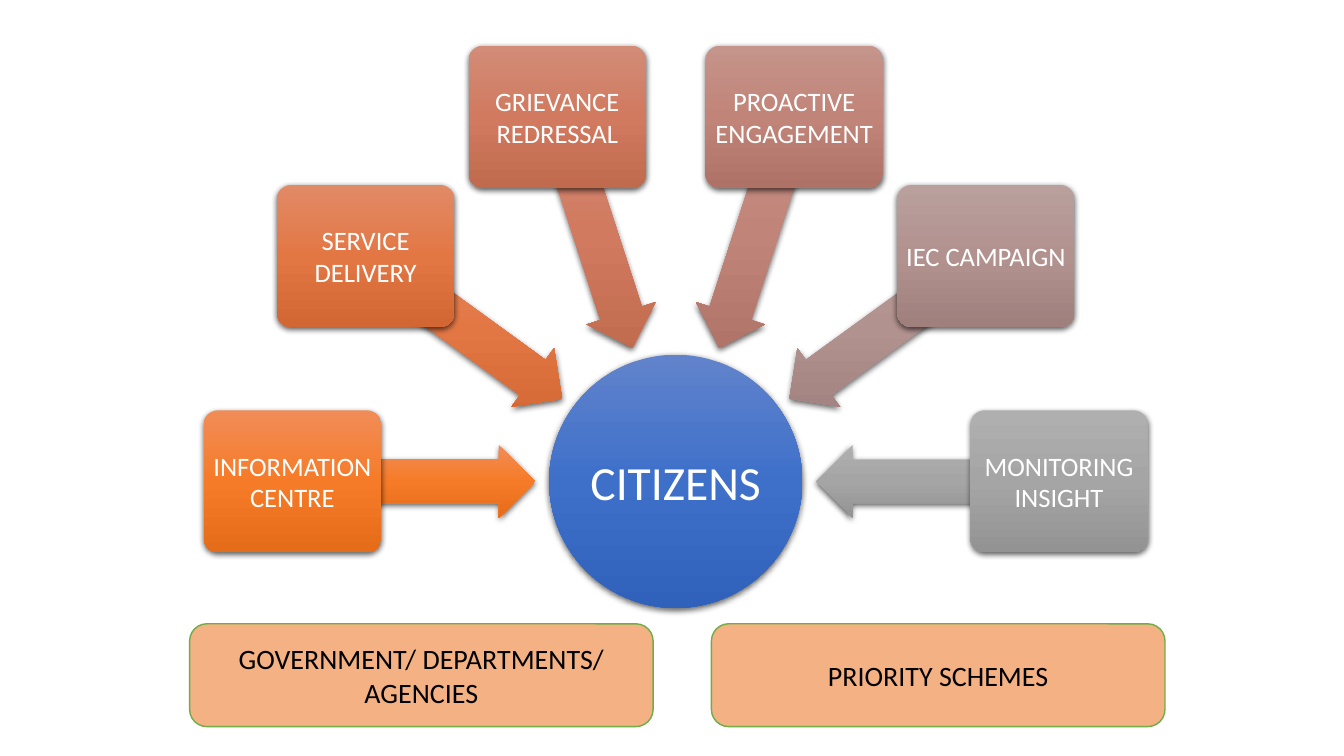
from copy import deepcopy
from math import cos, radians, sin

from lxml import etree
from pptx import Presentation
from pptx.dml.color import RGBColor
from pptx.enum.shapes import MSO_SHAPE
from pptx.enum.text import MSO_ANCHOR, PP_ALIGN
from pptx.oxml import parse_xml
from pptx.util import Cm, Pt

OVAL = MSO_SHAPE.OVAL
ROUNDED = MSO_SHAPE.ROUNDED_RECTANGLE
LEFT_ARROW = MSO_SHAPE.LEFT_ARROW
MIDDLE = MSO_ANCHOR.MIDDLE
CENTER = PP_ALIGN.CENTER

HUB = ("CITIZENS", ("6183CB", "3E70CA", "3062BB"))
SERVICES = [
    ("INFORMATION CENTRE", ("F18C57", "F67B28", "E56C19")),
    ("SERVICE DELIVERY", ("E18A66", "E37744", "D26734")),
    ("GRIEVANCE REDRESSAL", ("D28C78", "D17A5F", "C06A4E")),
    ("PROACTIVE ENGAGEMENT", ("C5948B", "C18478", "AF7267")),
    ("IEC CAMPAIGN", ("B9A09D", "B2928F", "A0807D")),
    ("MONITORING INSIGHT", ("AFAFAF", "A5A5A5", "939393")),
]
FOUNDATIONS = [
    ("PRIORITY SCHEMES", 17.93, 11.43),
    ("GOVERNMENT/ DEPARTMENTS/ AGENCIES", 4.78, 11.68),
]

FONT = "Calibri"
HUB_X, HUB_Y, HUB_SIZE = 17.03, 12.13, 6.38
BOX_RADIUS, BOX_WIDTH, BOX_HEIGHT = 9.66, 4.47, 3.58
ARROW_RADIUS, ARROW_WIDTH, ARROW_HEIGHT = 6.6, 6.12, 1.83
FOUNDATION_TOP, FOUNDATION_HEIGHT = 15.72, 2.59
STEP = 180 / (len(SERVICES) - 1)

DRAWING = "http://schemas.openxmlformats.org/drawingml/2006/main"
SHADOW = (
    f'<a:effectLst xmlns:a="{DRAWING}">'
    '<a:outerShdw blurRad="57150" dist="19050" dir="5400000" algn="ctr" rotWithShape="0">'
    '<a:srgbClr val="000000"><a:alpha val="63000"/></a:srgbClr>'
    '</a:outerShdw></a:effectLst>'
)


def rgb(value):
    return RGBColor.from_string(value)


def add_centred(slide, kind, x, y, width, height):
    return slide.shapes.add_shape(
        kind, Cm(x - width / 2), Cm(y - height / 2), Cm(width), Cm(height))


def on_ring(radius, angle):
    return HUB_X - radius * cos(radians(angle)), HUB_Y - radius * sin(radians(angle))


def shade(shape, colours):
    shape.fill.gradient()
    shape.fill.gradient_angle = 270
    gradient = shape.element.spPr.find(f"{{{DRAWING}}}gradFill")
    gradient.set("rotWithShape", "0")
    stops = gradient.find(f"{{{DRAWING}}}gsLst")
    stops.insert(1, deepcopy(stops[0]))
    for stop, colour, position in zip(shape.fill.gradient_stops, colours, (0, 0.5, 1)):
        stop.color.rgb = rgb(colour)
        stop.position = position
    shape.line.fill.background()
    shape.element.spPr.append(parse_xml(SHADOW))


def write(shape, text, size, colour, margin):
    frame = shape.text_frame
    frame.text = text
    frame.word_wrap = True
    frame.vertical_anchor = MIDDLE
    frame.margin_left = frame.margin_right = Cm(margin)
    frame.margin_top = frame.margin_bottom = Cm(margin)
    paragraph = frame.paragraphs[0]
    paragraph.alignment = CENTER
    font = paragraph.runs[0].font
    font.name = FONT
    font.size = Pt(size)
    font.color.rgb = rgb(colour)


def add_hub(slide):
    text, colours = HUB
    circle = add_centred(slide, OVAL, HUB_X, HUB_Y, HUB_SIZE, HUB_SIZE)
    shade(circle, colours)
    write(circle, text, 34, "FFFFFF", 0.05)


def add_service(slide, text, colours, angle):
    arrow = add_centred(
        slide, LEFT_ARROW, *on_ring(ARROW_RADIUS, angle), ARROW_WIDTH, ARROW_HEIGHT)
    arrow.adjustments[0] = 0.6
    arrow.adjustments[1] = 0.5
    arrow.rotation = (180 + angle) % 360
    shade(arrow, colours)

    box = add_centred(slide, ROUNDED, *on_ring(BOX_RADIUS, angle), BOX_WIDTH, BOX_HEIGHT)
    box.adjustments[0] = 0.1
    shade(box, colours)
    write(box, text, 19, "FFFFFF", 0.1)


def add_foundation(slide, text, left, width):
    bar = slide.shapes.add_shape(
        ROUNDED, Cm(left), Cm(FOUNDATION_TOP), Cm(width), Cm(FOUNDATION_HEIGHT))
    bar.shadow.inherit = False
    bar.fill.solid()
    bar.fill.fore_color.rgb = rgb("F4B183")
    bar.line.color.rgb = rgb("70AD47")
    bar.line.width = Pt(1)
    write(bar, text, 20, "000000", 0.2)


def main():
    presentation = Presentation()
    presentation.slide_width = Cm(33.87)
    presentation.slide_height = Cm(19.05)
    slide = presentation.slides.add_slide(presentation.slide_layouts[6])
    add_hub(slide)
    for index, (text, colours) in enumerate(SERVICES):
        add_service(slide, text, colours, index * STEP)
    for foundation in FOUNDATIONS:
        add_foundation(slide, *foundation)
    presentation.save("out.pptx")


if __name__ == "__main__":
    main()
